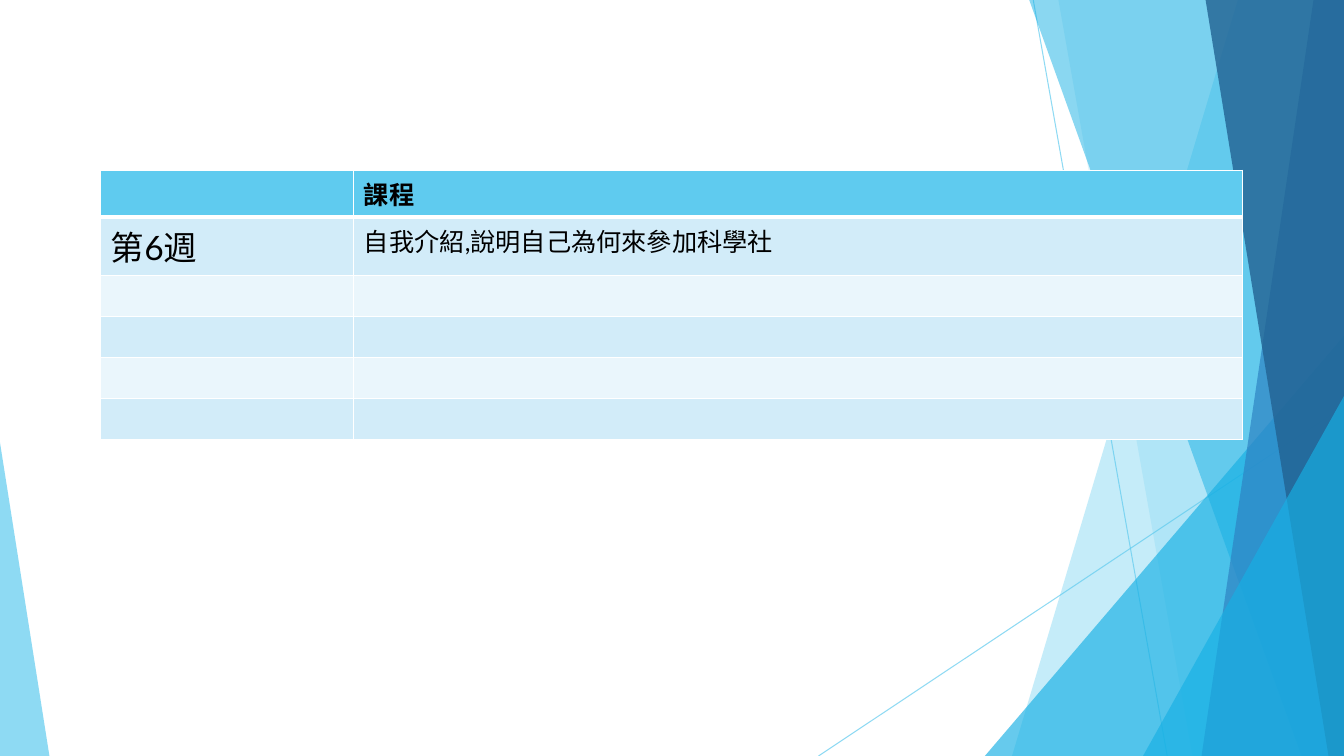
from dataclasses import dataclass

from lxml.etree import SubElement
from pptx import Presentation
from pptx.dml.color import RGBColor
from pptx.enum.shapes import MSO_CONNECTOR, MSO_SHAPE
from pptx.oxml.ns import qn
from pptx.util import Emu, Inches, Pt

WIDTH, HEIGHT = Inches(13.33), Inches(7.5)
SKY, CYAN, BLUE, NAVY = "5FCBEF", "17B0E4", "2E83C3", "226292"
BLACK, WHITE = "000000", "FFFFFF"
BANDS = ("D2ECF9", "EAF6FC")


# Positions are percentages of the slide's width and height
@dataclass
class Ray:
    start: tuple[float, float]
    end: tuple[float, float]


@dataclass
class Facet:
    """A pane from its slanted left edge to the right side of the slide."""
    top_x: float
    bottom_x: float
    color: str
    opacity: int


@dataclass
class Corner:
    """A right triangle standing on the bottom of the slide."""
    left: float
    top: float
    width: float
    apex: float
    color: str
    opacity: int


@dataclass
class Entry:
    text: str
    size: int = 18
    font: str = "Lato"
    bold: bool = False


RAYS = [Ray((76.88, 0), (86.85, 100)), Ray((100, 53.73), (60.9, 100))]
DECORATION = [
    Facet(92.1, 75.3, SKY, 36),
    Facet(78.75, 88.73, SKY, 20),
    Corner(73.28, 44.4, 26.72, 1, CYAN, 66),
    Facet(76.58, 96.83, CYAN, 50),
    Facet(97.73, 89.4, BLUE, 70),
    Facet(89.7, 98.85, NAVY, 80),
    Corner(85.05, 52.4, 14.95, 1, CYAN, 66),
    Corner(0, 58.53, 3.68, 0, SKY, 70),
]

COLUMN_WIDTHS = (18.83, 66.15)
ROW_COUNT, ROW_HEIGHT = 6, 5.41
ENTRIES = {
    (0, 1): Entry("課程", font="Arial", bold=True),
    (1, 0): Entry("第6週", size=24),
    (1, 1): Entry("自我介紹,說明自己為何來參加科學社"),
}


def across(share: float) -> Emu:
    return Emu(round(WIDTH * share / 100))


def down(share: float) -> Emu:
    return Emu(round(HEIGHT * share / 100))


def rgb(color: str) -> RGBColor:
    return RGBColor.from_string(color)


def set_opacity(shape, opacity: int) -> None:
    for color in shape.element.spPr.iter(qn("a:srgbClr")):
        SubElement(color, qn("a:alpha"), val=str(opacity * 1000))


def draw_ray(slide, ray: Ray) -> None:
    (x1, y1), (x2, y2) = ray.start, ray.end
    line = slide.shapes.add_connector(
        MSO_CONNECTOR.STRAIGHT, across(x1), down(y1), across(x2), down(y2))
    line.line.color.rgb = rgb(SKY)
    line.line.width = Pt(0.75)
    set_opacity(line, 70)
    SubElement(line.element.spPr, qn("a:effectLst"))


def draw_pane(slide, pane: Facet | Corner) -> None:
    if isinstance(pane, Facet):
        outline = slide.shapes.build_freeform(across(pane.top_x), down(0))
        outline.add_line_segments([
            (across(100), down(0)),
            (across(100), down(100)),
            (across(pane.bottom_x), down(100)),
        ])
        shape = outline.convert_to_shape()
    else:
        shape = slide.shapes.add_shape(
            MSO_SHAPE.ISOSCELES_TRIANGLE, across(pane.left), down(pane.top),
            across(pane.width), down(100 - pane.top))
        shape.adjustments[0] = pane.apex
    shape.shadow.inherit = False
    shape.fill.solid()
    shape.fill.fore_color.rgb = rgb(pane.color)
    shape.line.fill.background()
    set_opacity(shape, pane.opacity)


def draw_borders(cell, row: int) -> None:
    properties = cell._tc.get_or_add_tcPr()
    heavy_side = {0: "B", 1: "T"}.get(row)
    for side in "LRTB":
        width = Pt(3 if side == heavy_side else 1)
        border = SubElement(properties, qn(f"a:ln{side}"), w=str(width))
        fill = SubElement(border, qn("a:solidFill"))
        SubElement(fill, qn("a:srgbClr"), val=WHITE)


def write_entry(cell, entry: Entry) -> None:
    run = cell.text_frame.paragraphs[0].add_run()
    run.text = entry.text
    run.font.size = Pt(entry.size)
    run.font.name = entry.font
    run.font.bold = entry.bold
    run.font.color.rgb = rgb(BLACK)


def draw_schedule(slide) -> None:
    schedule = slide.shapes.add_table(
        ROW_COUNT, len(COLUMN_WIDTHS), across(7.5), down(22.53),
        across(sum(COLUMN_WIDTHS)), down(ROW_COUNT * ROW_HEIGHT)).table
    schedule.first_row = schedule.horz_banding = False
    for column, width in zip(schedule.columns, COLUMN_WIDTHS):
        column.width = across(width)
    for r, row in enumerate(schedule.rows):
        row.height = down(ROW_HEIGHT)
        for c, cell in enumerate(row.cells):
            draw_borders(cell, r)
            cell.fill.solid()
            cell.fill.fore_color.rgb = rgb(BANDS[(r - 1) % 2] if r else SKY)
            if (r, c) in ENTRIES:
                write_entry(cell, ENTRIES[r, c])


def main() -> None:
    deck = Presentation()
    deck.slide_width, deck.slide_height = WIDTH, HEIGHT
    slide = deck.slides.add_slide(deck.slide_layouts[6])

    # Background rays and panes, back to front
    for ray in RAYS:
        draw_ray(slide, ray)
    for pane in DECORATION:
        draw_pane(slide, pane)

    # Course schedule
    draw_schedule(slide)
    deck.save("out.pptx")


if __name__ == "__main__":
    main()
